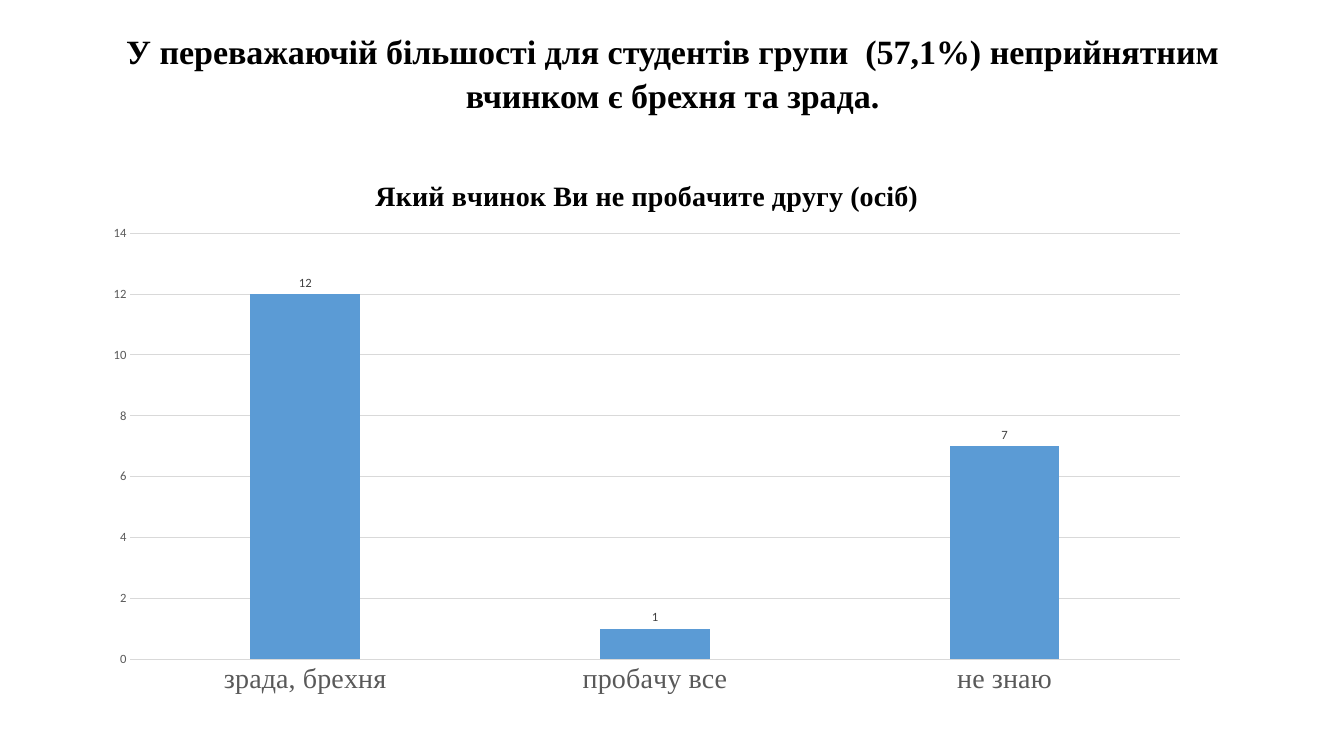
from dataclasses import dataclass

from lxml import etree
from pptx import Presentation
from pptx.chart.data import CategoryChartData
from pptx.dml.color import RGBColor
from pptx.enum.chart import XL_CHART_TYPE, XL_LABEL_POSITION, XL_TICK_MARK
from pptx.enum.text import MSO_ANCHOR, MSO_AUTO_SIZE, PP_ALIGN
from pptx.oxml.ns import qn
from pptx.util import Inches, Pt

COLUMNS = XL_CHART_TYPE.COLUMN_CLUSTERED
ABOVE_BAR = XL_LABEL_POSITION.OUTSIDE_END
NO_TICK = XL_TICK_MARK.NONE
MIDDLE = MSO_ANCHOR.MIDDLE
CENTER = PP_ALIGN.CENTER
FIXED_SIZE = MSO_AUTO_SIZE.NONE

SLIDE_WIDTH, SLIDE_HEIGHT = Inches(13.33), Inches(7.5)
TITLE_ONLY = 5

HEADLINE = ("У переважаючій більшості для студентів групи  (57,1%) "
            "неприйнятним вчинком є брехня та зрада.")
QUESTION = "Який вчинок Ви не пробачите другу (осіб)"
ANSWERS = {"зрада, брехня": 12, "пробачу все": 1, "не знаю": 7}


@dataclass(frozen=True)
class Theme:
    serif: str = "Times New Roman"
    sans: str = "Calibri"
    ink: str = "000000"
    axis_ink: str = "595959"
    label_ink: str = "404040"
    grid: str = "D9D9D9"
    bar: str = "5B9BD5"
    headline: float = 24.3
    question: float = 20
    answer: float = 20
    base: float = 10
    small: float = 9
    hairline: float = 0.75


THEME = Theme()


def apply(target, values):
    for name, value in values.items():
        setattr(target, name, value)


def style_font(font, face, size, color, bold=False):
    apply(font, {"name": face, "size": Pt(size), "bold": bold})
    font.color.rgb = RGBColor.from_string(color)


def style_line(line):
    line.width = Pt(THEME.hairline)
    line.color.rgb = RGBColor.from_string(THEME.grid)


def frame(left, top, width, height):
    """Turn shares of the slide's size into lengths."""
    return {"left": int(SLIDE_WIDTH * left), "top": int(SLIDE_HEIGHT * top),
            "width": int(SLIDE_WIDTH * width), "height": int(SLIDE_HEIGHT * height)}


def place_in_chart(part, index, settings):
    """Give a chart part a manual layout, in shares of the chart's size."""
    for old in part.findall(qn("c:layout")):
        part.remove(old)
    layout = etree.Element(qn("c:layout"))
    part.insert(index, layout)
    manual = etree.SubElement(layout, qn("c:manualLayout"))
    for name, value in settings.items():
        etree.SubElement(manual, qn(f"c:{name}")).set("val", str(value))


def write_headline(slide):
    title = slide.shapes.title
    apply(title, frame(0.069, 0.053, 0.863, 0.103))
    text = title.text_frame
    apply(text, {"word_wrap": True, "auto_size": FIXED_SIZE,
                 "vertical_anchor": MIDDLE, "margin_bottom": Inches(0.2)})
    paragraph = text.paragraphs[0]
    apply(paragraph, {"alignment": CENTER, "line_spacing": 1.07,
                      "space_before": Pt(0)})
    run = paragraph.add_run()
    run.text = HEADLINE
    style_font(run.font, THEME.serif, THEME.headline, THEME.ink, bold=True)


def write_question(chart):
    chart.has_title = True
    paragraph = chart.chart_title.text_frame.paragraphs[0]
    run = paragraph.add_run()
    run.text = QUESTION
    style_font(run.font, THEME.serif, THEME.question, THEME.ink, bold=True)
    chart.chart_title.include_in_layout = False
    place_in_chart(chart._chartSpace.chart.find(qn("c:title")), 1,
                   {"xMode": "edge", "yMode": "edge", "x": 0.25, "y": 0.04})


def style_axes(chart):
    answers, people = chart.category_axis, chart.value_axis
    for axis, face, size in ((answers, THEME.serif, THEME.answer),
                             (people, THEME.sans, THEME.small)):
        apply(axis, {"major_tick_mark": NO_TICK, "minor_tick_mark": NO_TICK})
        style_font(axis.tick_labels.font, face, size, THEME.axis_ink)
    apply(people, {"minimum_scale": 0, "maximum_scale": 14, "major_unit": 2,
                   "has_major_gridlines": True})
    people.format.line.fill.background()
    style_line(answers.format.line)
    style_line(people.major_gridlines.format.line)


def style_bars(plot):
    apply(plot, {"gap_width": 219, "overlap": -27, "vary_by_categories": False})
    bars = plot.series[0]
    bars.format.fill.solid()
    bars.format.fill.fore_color.rgb = RGBColor.from_string(THEME.bar)
    labels = bars.data_labels
    apply(labels, {"show_value": True, "position": ABOVE_BAR})
    style_font(labels.font, THEME.sans, THEME.small, THEME.label_ink)


def add_answer_chart(slide):
    data = CategoryChartData()
    data.categories = list(ANSWERS)
    data.add_series("Series 1", list(ANSWERS.values()))
    place = frame(0.069, 0.199, 0.826, 0.735)
    chart = slide.shapes.add_chart(COLUMNS, *place.values(), data).chart
    chart.has_legend = False
    style_font(chart.font, THEME.sans, THEME.base, THEME.ink)
    write_question(chart)
    style_axes(chart)
    style_bars(chart.plots[0])
    place_in_chart(chart._chartSpace.chart.plotArea, 0,
                   {"layoutTarget": "inner", "xMode": "edge", "yMode": "edge",
                    "x": 0.034, "y": 0.149, "w": 0.945, "h": 0.767})


def main():
    deck = Presentation()
    apply(deck, {"slide_width": SLIDE_WIDTH, "slide_height": SLIDE_HEIGHT})
    slide = deck.slides.add_slide(deck.slide_layouts[TITLE_ONLY])
    write_headline(slide)
    add_answer_chart(slide)
    deck.save("out.pptx")


if __name__ == "__main__":
    main()
